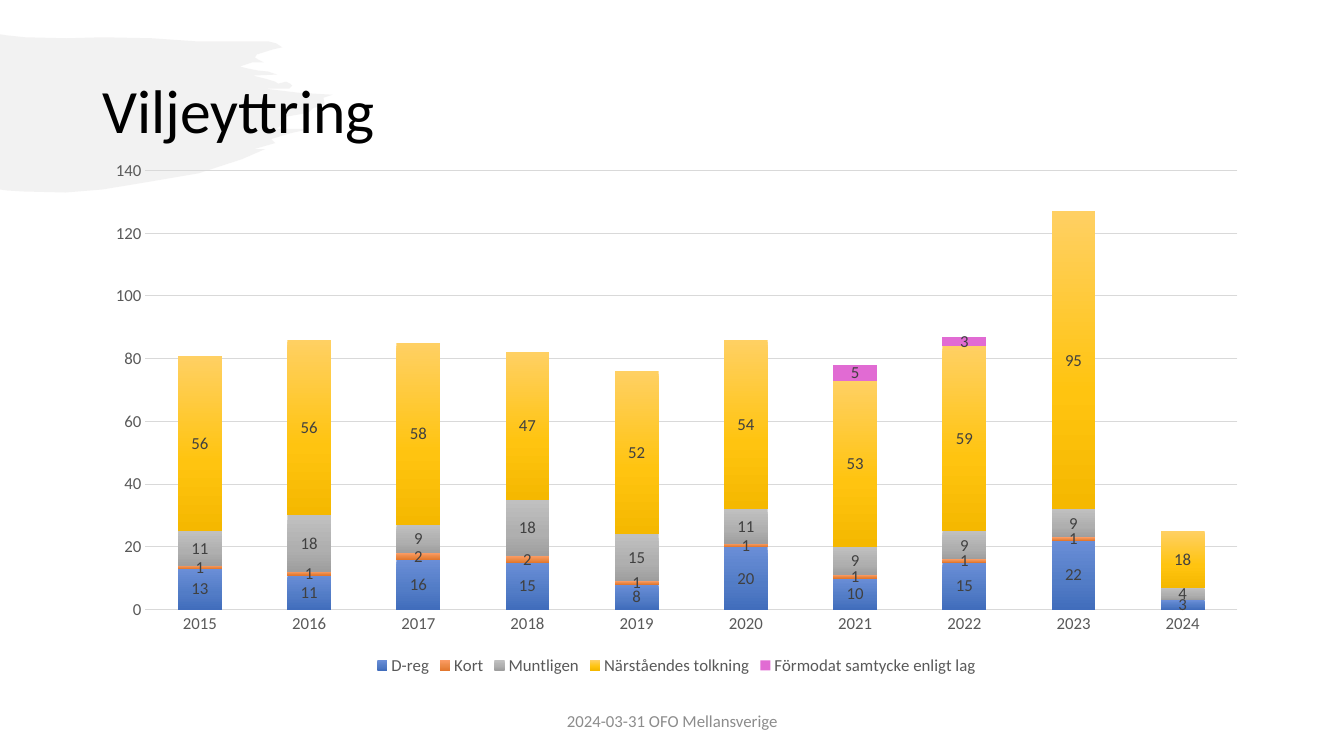
from dataclasses import dataclass
from typing import Optional

from lxml.etree import SubElement
from pptx import Presentation
from pptx.chart.data import CategoryChartData
from pptx.chart.series import BarSeries
from pptx.dml.color import RGBColor
from pptx.enum.chart import XL_CHART_TYPE as ChartType
from pptx.enum.chart import XL_LABEL_POSITION as LabelPosition
from pptx.enum.chart import XL_LEGEND_POSITION as LegendPosition
from pptx.enum.chart import XL_TICK_MARK as TickMark
from pptx.enum.text import MSO_ANCHOR as Anchor
from pptx.enum.text import PP_ALIGN as Align
from pptx.oxml.ns import qn
from pptx.slide import Slide
from pptx.text.text import Font
from pptx.util import Cm, Pt

FONT = "Calibri"
COLOURS = {
    "brush": "E7E6E6",
    "title": "000000",
    "footer": "8C8C8C",
    "axis_text": "595959",
    "label": "404040",
    "grid": "D9D9D9",
}


@dataclass(frozen=True)
class TextBlock:
    text: str
    left: float
    top: float
    width: float
    height: float
    size: int
    colour: str
    align: Align = Align.LEFT
    line_spacing: float = 1.0


@dataclass(frozen=True)
class Consent:
    """One kind of consent: its yearly counts and one or three fill colours."""
    name: str
    counts: tuple[Optional[int], ...]
    fill: tuple[str, ...]


TEXTS = (
    TextBlock("Viljeyttring", 2.33, 1.01, 29.21, 3.68, 44, "title", line_spacing=0.9),
    TextBlock("2024-03-31 OFO Mellansverige", 11.23, 17.65, 11.43, 1.02, 12, "footer", Align.CENTER),
)
YEARS = [str(year) for year in range(2015, 2025)]
CONSENTS = (
    Consent("D-reg", (13, 11, 16, 15, 8, 20, 10, 15, 22, 3), ("6A8ED7", "527CC6", "416DBC")),
    Consent("Kort", (1, 1, 2, 2, 1, 1, 1, 1, 1, None), ("FB9B64", "EB8844", "E3782F")),
    Consent("Muntligen", (11, 18, 9, 18, 15, 11, 9, 9, 9, 4), ("C0C0C0", "AFAFAF", "9E9E9E")),
    Consent("Närståendes tolkning", (56, 56, 58, 47, 52, 54, 53, 59, 95, 18),
            ("FFD063", "FFC410", "F5B800")),
    Consent("Förmodat samtycke enligt lag", (None,) * 6 + (5, 3, None, None), ("E16BD3",)),
)
GRADIENT_STOPS = (0, 60, 100)

# Outline of the brush stroke, in hundredths of an inch
BRUSH_POINTS = (
    (0, 34), (6, 35), (25, 37), (66, 38), (102, 37), (151, 38), (194, 41), (248, 41),
    (266, 41), (274, 43), (280, 47), (271, 49), (255, 54), (253, 57), (256, 59), (262, 62),
    (250, 62), (238, 66), (246, 68), (256, 70), (266, 71), (275, 74), (251, 75), (263, 78),
    (273, 81), (276, 83), (280, 82), (284, 81), (288, 83), (290, 85), (287, 88), (284, 88),
    (263, 88), (296, 92), (330, 94), (321, 97), (322, 103), (318, 106), (311, 107), (307, 111),
    (300, 113), (283, 116), (280, 120), (278, 125), (274, 128), (308, 128), (289, 132),
    (269, 138), (273, 142), (252, 148), (263, 148), (240, 158), (197, 172), (150, 180),
    (102, 188), (65, 191), (23, 190), (7, 189), (0, 188),
)


def rgb(name: str) -> RGBColor:
    return RGBColor.from_string(COLOURS[name])


def style_font(font: Font, size: int, colour: str) -> None:
    font.name = FONT
    font.size = Pt(size)
    font.color.rgb = rgb(colour)


def draw_brush(page: Slide) -> None:
    builder = page.shapes.build_freeform(*BRUSH_POINTS[0], scale=Cm(2.54) / 100)
    builder.add_line_segments(BRUSH_POINTS[1:], close=True)
    brush = builder.convert_to_shape()
    brush.shadow.inherit = False
    brush.line.fill.background()
    brush.fill.solid()
    brush.fill.fore_color.rgb = rgb("brush")
    colour = brush._element.spPr.find(f".//{qn('a:srgbClr')}")
    SubElement(colour, qn("a:alpha"), val="50000")


def draw_text(page: Slide, block: TextBlock) -> None:
    box = page.shapes.add_textbox(Cm(block.left), Cm(block.top), Cm(block.width), Cm(block.height))
    frame = box.text_frame
    frame.word_wrap = True
    frame.vertical_anchor = Anchor.MIDDLE
    para = frame.paragraphs[0]
    para.text = block.text
    para.alignment = block.align
    para.line_spacing = block.line_spacing
    style_font(para.font, block.size, block.colour)


def fill_series(series: BarSeries, colours: tuple[str, ...]) -> None:
    """Fill with one plain colour, or with a gradient from top to bottom."""
    fill = series.format.fill
    if len(colours) == 1:
        fill.solid()
        fill.fore_color.rgb = RGBColor.from_string(colours[0])
        return
    fill.gradient()
    gradient = series._element.spPr.find(qn("a:gradFill"))
    stops = gradient.find(qn("a:gsLst"))
    for old_stop in list(stops):
        stops.remove(old_stop)
    for position, colour in zip(GRADIENT_STOPS, colours):
        stop = SubElement(stops, qn("a:gs"), pos=str(position * 1000))
        SubElement(stop, qn("a:srgbClr"), val=colour)
    gradient.find(qn("a:lin")).set("ang", str(90 * 60000))


def draw_chart(page: Slide) -> None:
    data = CategoryChartData()
    data.categories = YEARS
    for consent in CONSENTS:
        data.add_series(consent.name, consent.counts)
    chart = page.shapes.add_chart(
        ChartType.COLUMN_STACKED, Cm(2.33), Cm(3.78), Cm(29.44), Cm(13.34), data).chart
    chart.has_title = False
    chart.font.name = FONT
    chart.font.size = Pt(10)

    plot = chart.plots[0]
    plot.gap_width = 150
    plot.overlap = 100
    plot.vary_by_categories = False
    for series, consent in zip(plot.series, CONSENTS):
        fill_series(series, consent.fill)
        labels = series.data_labels
        labels.show_value = True
        labels.position = LabelPosition.CENTER
        style_font(labels.font, 12, "label")

    for axis in (chart.category_axis, chart.value_axis):
        axis.major_tick_mark = axis.minor_tick_mark = TickMark.NONE
        style_font(axis.tick_labels.font, 12, "axis_text")
    chart.category_axis.format.line.color.rgb = rgb("grid")
    chart.category_axis.format.line.width = Pt(1)

    counts = chart.value_axis
    counts.minimum_scale, counts.maximum_scale, counts.major_unit = 0, 140, 20
    counts.format.line.fill.background()
    counts.major_gridlines.format.line.color.rgb = rgb("grid")
    counts.major_gridlines.format.line.width = Pt(0.75)

    chart.has_legend = True
    chart.legend.position = LegendPosition.BOTTOM
    chart.legend.include_in_layout = False
    style_font(chart.legend.font, 12, "axis_text")


def main() -> None:
    deck = Presentation()
    deck.slide_width, deck.slide_height = Cm(33.87), Cm(19.05)
    page = deck.slides.add_slide(deck.slide_layouts[6])
    draw_brush(page)
    for block in TEXTS:
        draw_text(page, block)
    draw_chart(page)
    deck.save("out.pptx")


if __name__ == "__main__":
    main()
